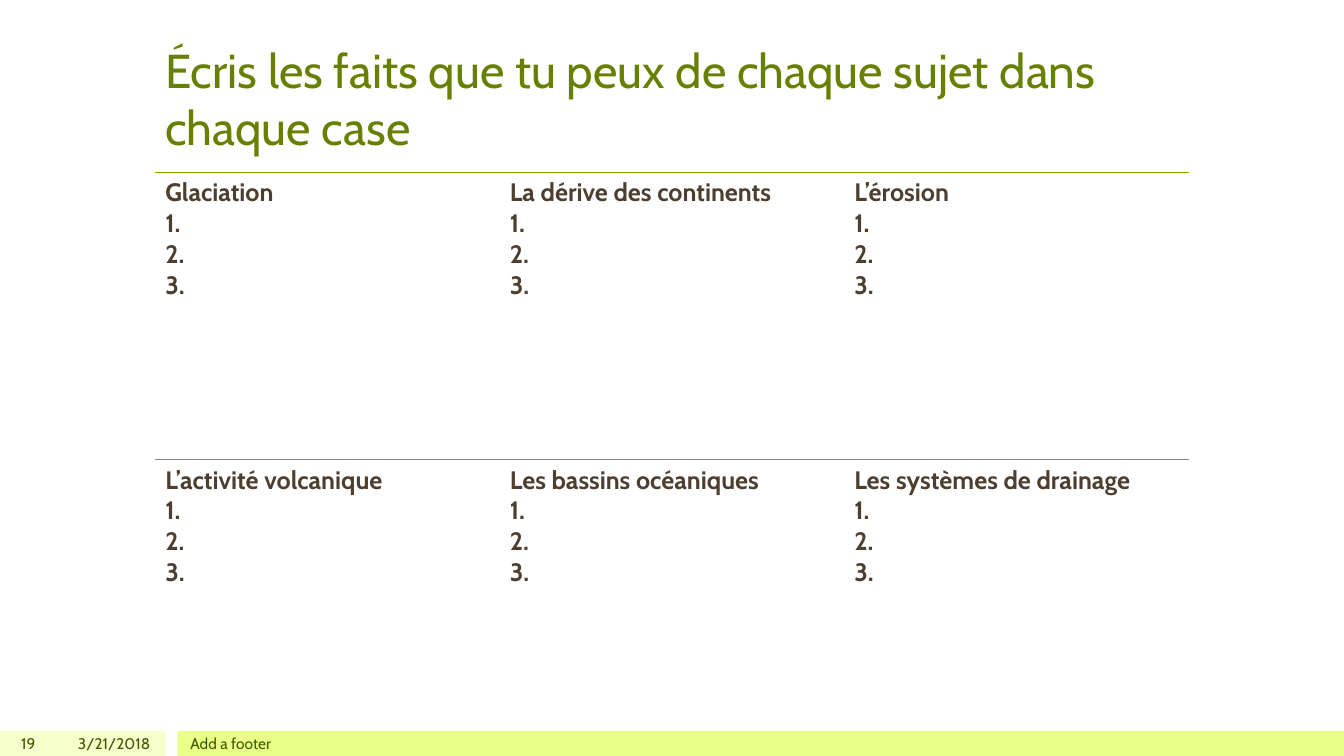
from dataclasses import dataclass

from lxml import etree
from pptx import Presentation
from pptx.dml.color import RGBColor
from pptx.enum.shapes import MSO_SHAPE
from pptx.enum.text import MSO_ANCHOR, MSO_AUTO_SIZE, PP_ALIGN
from pptx.oxml.ns import qn
from pptx.util import Inches, Pt

LEFT, RIGHT = PP_ALIGN.LEFT, PP_ALIGN.RIGHT
MIDDLE, BOTTOM = MSO_ANCHOR.MIDDLE, MSO_ANCHOR.BOTTOM
RECTANGLE = MSO_SHAPE.RECTANGLE
NO_AUTO_SIZE = MSO_AUTO_SIZE.NONE

FONT = "Cabin"
PLAIN_TABLE_STYLE = "{2D5ABB26-0587-4C30-8999-92F81FD0307C}"
TITLE_COLOR = "688000"
BODY_COLOR = "4D3E2F"
FOOTER_COLOR = "455500"
RULE_COLOR = "8BAA00"
DIVIDER_COLOR = "8C8C8C"

FOOTER_TOP, FOOTER_HEIGHT = 7.25, 0.25
GRID_LEFT, GRID_TOP, GRID_WIDTH = 1.54, 1.71, 10.25
ROW_HEIGHTS = (2.85, 3.05)
TOPICS = (
    ("Glaciation", "La dérive des continents", "L’érosion"),
    ("L’activité volcanique", "Les bassins océaniques", "Les systèmes de drainage"),
)
FACT_NUMBERS = ("1.", "2.", "3.")


@dataclass(frozen=True)
class Band:
    left: float
    width: float
    color: str


@dataclass(frozen=True)
class FooterText:
    left: float
    width: float
    text: str
    align: PP_ALIGN


@dataclass(frozen=True)
class Border:
    side: str
    color: str
    points: float


BANDS = (Band(0, 1.64, "F6FFCC"), Band(1.76, 11.57, "E9FF88"))
FOOTER_TEXTS = (
    FooterText(0, 0.45, "19", RIGHT),
    FooterText(0.5, 1.09, "3/21/2018", RIGHT),
    FooterText(1.79, 10, "Add a footer", LEFT),
)
TOP_RULE = Border("a:lnT", RULE_COLOR, 1)
DIVIDER_ABOVE = Border("a:lnT", DIVIDER_COLOR, 0.75)
DIVIDER_BELOW = Border("a:lnB", DIVIDER_COLOR, 0.75)
BOTTOM_RULE = Border("a:lnB", RULE_COLOR, 1)
ROW_BORDERS = ((TOP_RULE, DIVIDER_BELOW), (DIVIDER_ABOVE, BOTTOM_RULE))


def rgb(color: str) -> RGBColor:
    return RGBColor.from_string(color)


def add_span(para, text: str, size: float, color: str, bold: bool = False) -> None:
    span = para.add_run()
    span.text = text
    span.font.name = FONT
    span.font.size = Pt(size)
    span.font.bold = bold
    span.font.color.rgb = rgb(color)


def add_band(page, band: Band) -> None:
    box = page.shapes.add_shape(
        RECTANGLE, Inches(band.left), Inches(FOOTER_TOP),
        Inches(band.width), Inches(FOOTER_HEIGHT),
    )
    box.shadow.inherit = False
    box.fill.solid()
    box.fill.fore_color.rgb = rgb(band.color)
    box.line.fill.background()


def set_title(page, text: str) -> None:
    box = page.shapes.title
    box.left, box.top = Inches(GRID_LEFT), Inches(0.3)
    box.width, box.height = Inches(GRID_WIDTH), Inches(1.29)
    frame = box.text_frame
    frame.word_wrap = True
    frame.auto_size = NO_AUTO_SIZE
    frame.vertical_anchor = BOTTOM
    para = frame.paragraphs[0]
    para.alignment = LEFT
    add_span(para, text, 34, TITLE_COLOR)


def add_border(cell, border: Border) -> None:
    properties = cell._tc.get_or_add_tcPr()
    line = etree.SubElement(properties, qn(border.side), w=str(Pt(border.points)))
    fill = etree.SubElement(line, qn("a:solidFill"))
    etree.SubElement(fill, qn("a:srgbClr"), val=border.color)


def fill_cell(cell, topic: str, borders: tuple[Border, ...]) -> None:
    frame = cell.text_frame
    for index, text in enumerate((topic, *FACT_NUMBERS)):
        para = frame.add_paragraph() if index else frame.paragraphs[0]
        add_span(para, text, 18, BODY_COLOR, bold=True)
    for border in borders:
        add_border(cell, border)
    cell.fill.background()


def add_topic_grid(page) -> None:
    frame = page.shapes.add_table(
        len(TOPICS), len(TOPICS[0]), Inches(GRID_LEFT), Inches(GRID_TOP),
        Inches(GRID_WIDTH), Inches(sum(ROW_HEIGHTS)),
    )
    table = frame.table
    table.first_row = False
    table.horz_banding = False
    table._tbl.tblPr.find(qn("a:tableStyleId")).text = PLAIN_TABLE_STYLE
    for row, (height, topics, borders) in enumerate(zip(ROW_HEIGHTS, TOPICS, ROW_BORDERS)):
        table.rows[row].height = Inches(height)
        for column, topic in enumerate(topics):
            fill_cell(table.cell(row, column), topic, borders)


def add_footer_text(page, item: FooterText) -> None:
    box = page.shapes.add_textbox(
        Inches(item.left), Inches(FOOTER_TOP), Inches(item.width), Inches(FOOTER_HEIGHT)
    )
    frame = box.text_frame
    frame.word_wrap = True
    frame.vertical_anchor = MIDDLE
    para = frame.paragraphs[0]
    para.alignment = item.align
    add_span(para, item.text, 11, FOOTER_COLOR)


def main() -> None:
    deck = Presentation()
    deck.slide_width, deck.slide_height = Inches(13.33), Inches(7.5)
    page = deck.slides.add_slide(deck.slide_layouts[5])
    for band in BANDS:
        add_band(page, band)
    set_title(page, "Écris les faits que tu peux de chaque sujet dans chaque case")
    add_topic_grid(page)
    for item in FOOTER_TEXTS:
        add_footer_text(page, item)
    deck.save("out.pptx")


if __name__ == "__main__":
    main()
